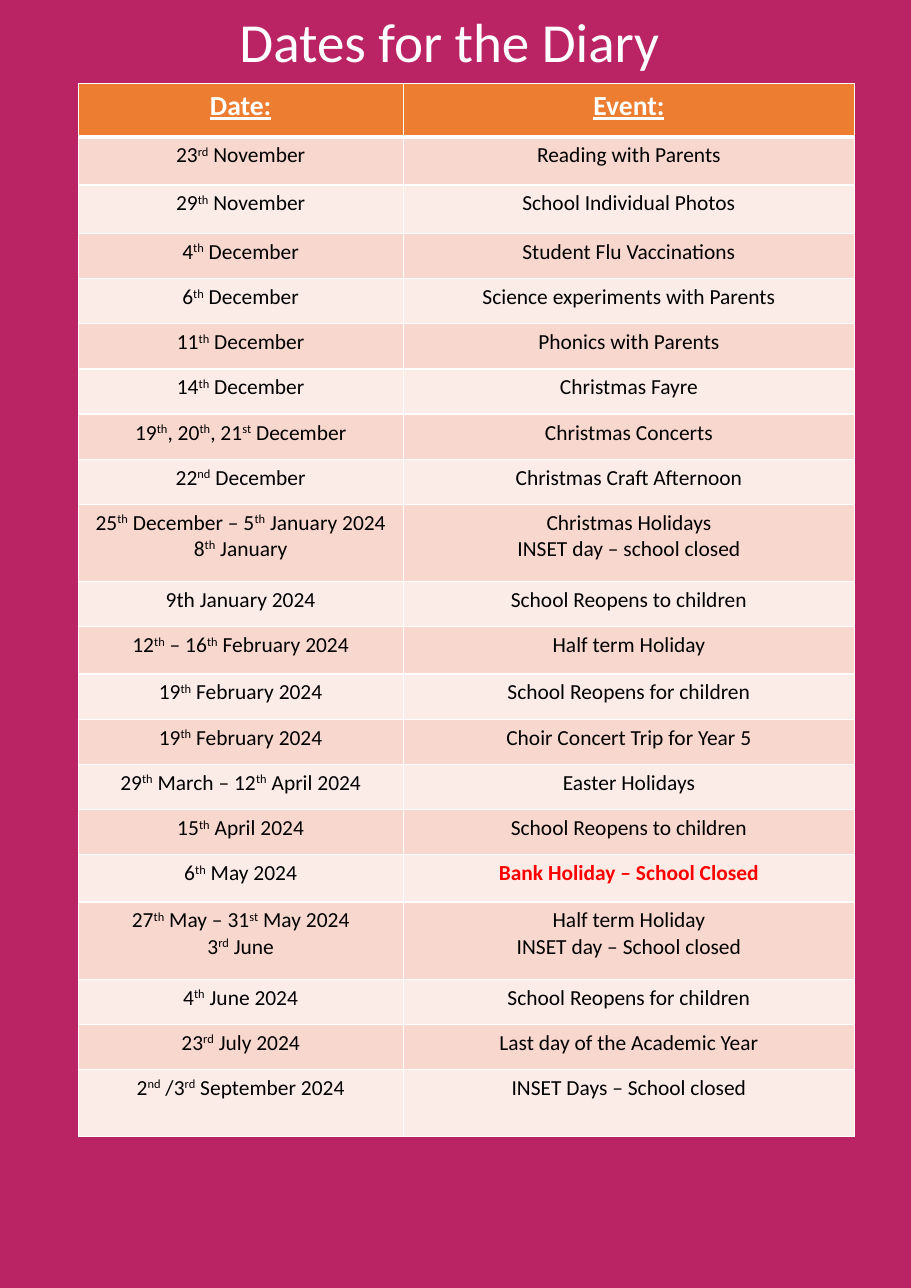
from lxml.etree import SubElement
from pptx import Presentation
from pptx.dml.color import RGBColor
from pptx.enum.text import MSO_ANCHOR, MSO_AUTO_SIZE, PP_ALIGN
from pptx.oxml.ns import qn
from pptx.util import Inches, Pt

FONT = "Calibri"
BACKGROUND, HEADER, WHITE, BLACK, RED = "BA2464", "ED7D31", "FFFFFF", "000000", "FF0000"
BANDS = ("F8D7CE", "FCECE8")
COLUMN_WIDTHS = (2.95, 4.1)
HEADER_HEIGHT, ROW_HEIGHT = 0.48, 0.41
THIN, THICK = 1, 3
CLOSED_DAY = "Bank Holiday – School Closed"

# Text between carets is raised; a line break starts a new paragraph
DIARY = [
    ("23^rd^ November", "Reading with Parents"),
    ("29^th^ November", "School Individual Photos"),
    ("4^th^ December", "Student Flu Vaccinations"),
    ("6^th^ December", "Science experiments with Parents"),
    ("11^th^ December", "Phonics with Parents"),
    ("14^th^ December", "Christmas Fayre"),
    ("19^th^, 20^th^, 21^st^ December", "Christmas Concerts"),
    ("22^nd^ December", "Christmas Craft Afternoon"),
    ("25^th^ December – 5^th^ January 2024\n8^th^ January",
     "Christmas Holidays\nINSET day – school closed"),
    ("9th January 2024", "School Reopens to children"),
    ("12^th^ – 16^th^ February 2024", "Half term Holiday"),
    ("19^th^ February 2024", "School Reopens for children"),
    ("19^th^ February 2024", "Choir Concert Trip for Year 5"),
    ("29^th^ March – 12^th^ April 2024", "Easter Holidays"),
    ("15^th^ April 2024", "School Reopens to children"),
    ("6^th^ May 2024", CLOSED_DAY),
    ("27^th^ May – 31^st^ May 2024\n3^rd^ June",
     "Half term Holiday\nINSET day – School closed"),
    ("4^th^ June 2024", "School Reopens for children"),
    ("23^rd^ July 2024", "Last day of the Academic Year"),
    ("2^nd^ /3^rd^ September 2024", "INSET Days – School closed"),
]
# Rows taller than the usual height, counted from the header as row 0
TALL_ROWS = {1: 0.44, 2: 0.44, 9: 0.7, 11: 0.43, 16: 0.43, 17: 0.7, 20: 0.61}


def color(hex_code):
    return RGBColor.from_string(hex_code)


def write_text(frame, text, size, hex_code, bold=False, underline=False):
    """Fill a frame with centred paragraphs, raising the parts between carets."""
    for number, line in enumerate(text.split("\n")):
        para = frame.add_paragraph() if number else frame.paragraphs[0]
        para.alignment = PP_ALIGN.CENTER
        for index, part in enumerate(line.split("^")):
            span = para.add_run()
            span.text = part
            font = span.font
            font.name, font.size = FONT, Pt(size)
            font.bold, font.underline = bold, underline
            font.color.rgb = color(hex_code)
            if index % 2:
                font._element.set("baseline", "30000")


def add_borders(cell, top, bottom):
    properties = cell._tc.get_or_add_tcPr()
    for side, width in (("L", THIN), ("R", THIN), ("T", top), ("B", bottom)):
        line = SubElement(properties, qn(f"a:ln{side}"), w=str(Pt(width)))
        fill = SubElement(line, qn("a:solidFill"))
        SubElement(fill, qn("a:srgbClr"), val=WHITE)


def fill_cell(cell, hex_code):
    cell.fill.solid()
    cell.fill.fore_color.rgb = color(hex_code)


def add_title(page, deck):
    box = page.shapes.title
    box.left, box.top, box.width, box.height = 0, 0, deck.slide_width, Inches(0.74)
    box.fill.solid()
    box.fill.fore_color.rgb = color(BACKGROUND)
    frame = box.text_frame
    frame.auto_size = MSO_AUTO_SIZE.NONE
    frame.vertical_anchor = MSO_ANCHOR.MIDDLE
    frame.margin_right = Inches(0.21)
    write_text(frame, "Dates for the Diary", 36, WHITE)


def add_diary(page):
    heights = [HEADER_HEIGHT] + [TALL_ROWS.get(row, ROW_HEIGHT)
                                 for row in range(1, len(DIARY) + 1)]
    table = page.shapes.add_table(
        len(heights), len(COLUMN_WIDTHS), Inches(0.71), Inches(0.76),
        Inches(sum(COLUMN_WIDTHS)), Inches(sum(heights))).table
    table.horz_banding = False
    for column, width in zip(table.columns, COLUMN_WIDTHS):
        column.width = Inches(width)
    for row, height in zip(table.rows, heights):
        row.height = Inches(height)

    # Header row
    for cell, heading in zip(table.rows[0].cells, ("Date:", "Event:")):
        write_text(cell.text_frame, heading, 18, WHITE, bold=True, underline=True)
        add_borders(cell, THIN, THICK)
        fill_cell(cell, HEADER)

    # Banded rows of dates and events
    for number, entry in enumerate(DIARY):
        for cell, text in zip(table.rows[number + 1].cells, entry):
            closed = text == CLOSED_DAY
            write_text(cell.text_frame, text, 14, RED if closed else BLACK, bold=closed)
            add_borders(cell, THIN if number else THICK, THIN)
            fill_cell(cell, BANDS[number % 2])


def main():
    deck = Presentation()
    deck.slide_width, deck.slide_height = Inches(8.27), Inches(11.69)
    page = deck.slides.add_slide(deck.slide_layouts.get_by_name("Title Only"))
    page.background.fill.solid()
    page.background.fill.fore_color.rgb = color(BACKGROUND)
    add_title(page, deck)
    add_diary(page)
    deck.save("out.pptx")


if __name__ == "__main__":
    main()
